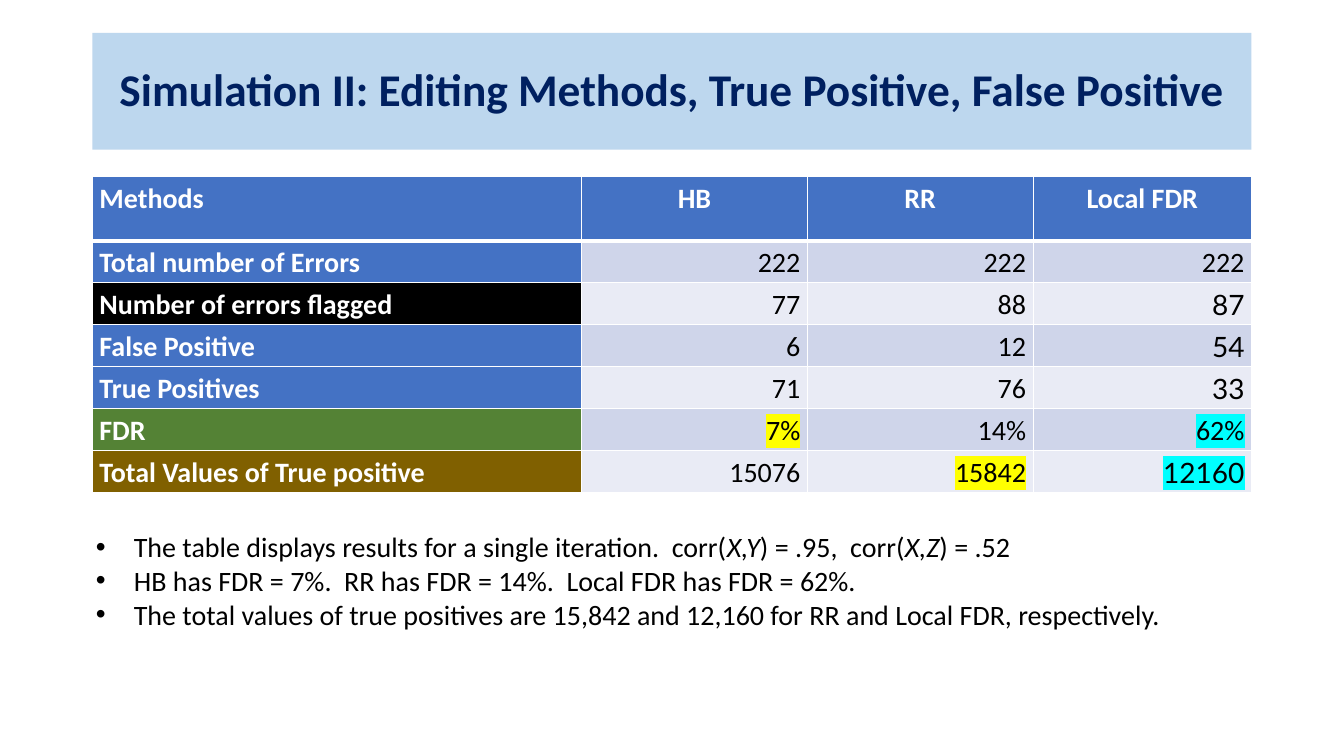
from lxml import etree
from pptx import Presentation
from pptx import util as u
from pptx.dml.color import RGBColor
from pptx.enum import shapes, text
from pptx.oxml import ns

ALIGN = text.PP_ALIGN
WHITE, BLACK, BLUE = "FFFFFF", "000000", "4472C4"
BANDS = ("CFD5EA", "E9EBF5")
YELLOW, CYAN = "FFFF00", "00FFFF"

HEADER = ("Methods", "HB", "RR", "Local FDR")
RESULTS = [
    ("Total number of Errors", BLUE, "222", "222", "222"),
    ("Number of errors flagged", BLACK, "77", "88", "87"),
    ("False Positive", BLUE, "6", "12", "54"),
    ("True Positives", BLUE, "71", "76", "33"),
    ("FDR", "548235", "7%", "14%", "62%"),
    ("Total Values of True positive", "806000", "15076", "15842", "12160"),
]
HIGHLIGHTS = {"7%": YELLOW, "15842": YELLOW, "62%": CYAN, "12160": CYAN}
LATO_VALUES = {"87", "54", "33", "12160"}

# Every second run of a note is italic.
NOTES = [
    ("The table displays results for a single iteration.  corr(", "X,Y",
     ") = .95,  corr(", "X,Z", ") = .52"),
    ("HB has FDR = 7%.  RR has FDR = 14%.  Local FDR has FDR = 62%.",),
    ("The total values of true positives are 15,842 and 12,160 "
     "for RR and Local FDR, respectively.",),
]


def rgb(hex_color):
    return RGBColor.from_string(hex_color)


def add_color(parent, tag, hex_color):
    holder = etree.SubElement(parent, ns.qn(tag))
    etree.SubElement(holder, ns.qn("a:srgbClr"), val=hex_color)
    return holder


class SlideBuilder:
    font = "Calibri"
    size = 20
    indent = 27

    def __init__(self, slide):
        self.slide = slide

    def run(self, paragraph, words, color=BLACK, size=None, font=None,
            bold=False, italic=False, highlight=None):
        run = paragraph.add_run()
        run.text = words
        run.font.size = u.Pt(size or self.size)
        run.font.name = font or self.font
        run.font.bold, run.font.italic = bold, italic
        run.font.color.rgb = rgb(color)
        if highlight:
            properties = run.font._element
            mark = add_color(properties, "a:highlight", highlight)
            properties.find(ns.qn("a:solidFill")).addnext(mark)

    def title(self, words, left, top, width, height):
        banner = self.slide.shapes.add_shape(
            shapes.MSO_SHAPE.RECTANGLE, *map(u.Pt, (left, top, width, height)))
        banner.shadow.inherit = False
        banner.fill.solid()
        banner.fill.fore_color.rgb = rgb("BDD7EE")
        banner.line.fill.background()
        frame = banner.text_frame
        frame.word_wrap = True
        frame.vertical_anchor = text.MSO_ANCHOR.MIDDLE
        heading = frame.paragraphs[0]
        heading.alignment, heading.line_spacing = ALIGN.CENTER, 0.9
        self.run(heading, words, "002060", size=32.4, bold=True)

    def borders(self, cell, top, bottom):
        """Draw white cell edges, given the top and bottom widths."""
        properties = cell._tc.get_or_add_tcPr()
        edges = (("L", 1), ("R", 1), ("T", top), ("B", bottom))
        for position, (side, width) in enumerate(edges):
            edge = add_color(properties, "a:solidFill", WHITE)
            line = etree.Element(ns.qn("a:ln" + side), w=str(u.Pt(width)))
            line.append(edge)
            properties.insert(position, line)

    def cell(self, cell, words, fill, align, top=1, bottom=1, **style):
        cell.margin_left = cell.margin_right = u.Pt(5)
        cell.margin_top = cell.margin_bottom = 0
        cell.fill.solid()
        cell.fill.fore_color.rgb = rgb(fill)
        self.borders(cell, top, bottom)
        paragraph = cell.text_frame.paragraphs[0]
        paragraph.alignment, paragraph.line_spacing = align, 1.15
        self.run(paragraph, words, **style)

    def results_table(self, left, top, widths, header_height, row_height):
        heights = [header_height] + [row_height] * len(RESULTS)
        table = self.slide.shapes.add_table(
            len(heights), len(widths), u.Pt(left), u.Pt(top),
            u.Pt(sum(widths)), u.Pt(sum(heights))).table
        for column, width in zip(table.columns, widths):
            column.width = u.Pt(width)
        for row, height in zip(table.rows, heights):
            row.height = u.Pt(height)

        for col, method in enumerate(HEADER):
            self.cell(table.cell(0, col), method, BLUE,
                      ALIGN.CENTER if col else ALIGN.LEFT,
                      bottom=3, color=WHITE, bold=True)
        for row, (measure, fill, *values) in enumerate(RESULTS, 1):
            rule = 3 if row == 1 else 1
            self.cell(table.cell(row, 0), measure, fill, ALIGN.LEFT,
                      top=rule, color=WHITE, bold=True)
            for col, value in enumerate(values, 1):
                lato = col == 3 and value in LATO_VALUES
                self.cell(table.cell(row, col), value, BANDS[(row - 1) % 2],
                          ALIGN.RIGHT, top=rule,
                          font="Lato" if lato else None,
                          highlight=HIGHLIGHTS.get(value))

    def bullets(self, notes, left, top, width, height):
        frame = self.slide.shapes.add_textbox(
            *map(u.Pt, (left, top, width, height))).text_frame
        frame.word_wrap = True
        for number, note in enumerate(notes):
            paragraph = frame.add_paragraph() if number else frame.paragraphs[0]
            properties = paragraph._p.get_or_add_pPr()
            properties.set("marL", str(u.Pt(self.indent)))
            properties.set("indent", str(-u.Pt(self.indent)))
            etree.SubElement(properties, ns.qn("a:buFont"), typeface="Arial")
            etree.SubElement(properties, ns.qn("a:buChar"), char="•")
            for part, words in enumerate(note):
                self.run(paragraph, words, italic=part % 2 == 1)


def main():
    deck = Presentation()
    deck.slide_width, deck.slide_height = u.Pt(960), u.Pt(540)
    builder = SlideBuilder(deck.slides.add_slide(deck.slide_layouts[6]))
    builder.title("Simulation II: Editing Methods, True Positive, False Positive",
                  66, 23.5, 828, 83.5)
    builder.results_table(66, 126, (349.5, 161.25, 161.25, 156), 46, 30)
    builder.bullets(NOTES, 61.5, 375, 837, 104.5)
    deck.save("out.pptx")


if __name__ == "__main__":
    main()
